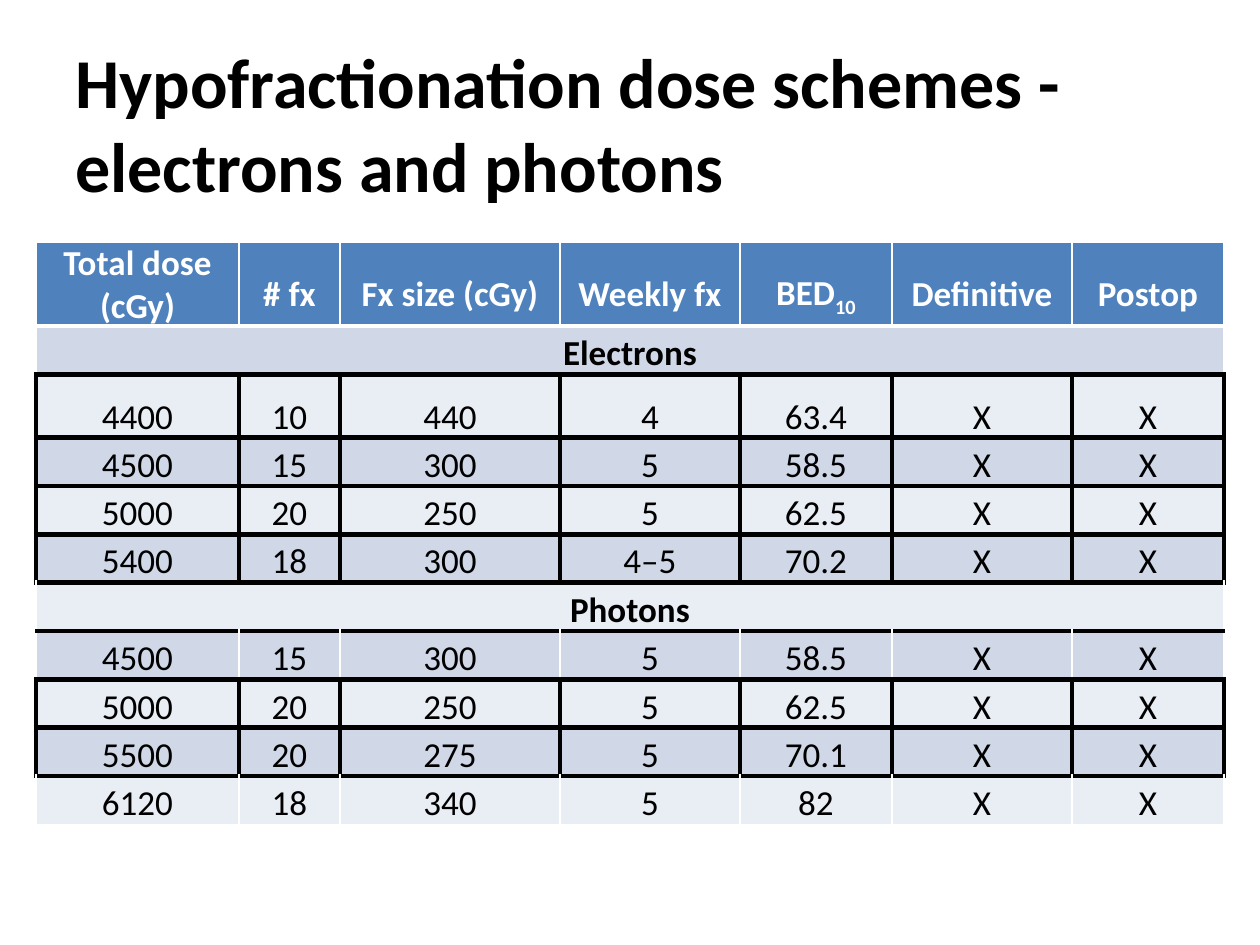
from dataclasses import dataclass

from lxml import etree
from pptx import Presentation
from pptx.dml.color import RGBColor
from pptx.enum.text import MSO_ANCHOR, PP_ALIGN
from pptx.oxml.ns import qn
from pptx.util import Pt

CENTER = PP_ALIGN.CENTER
MIDDLE = MSO_ANCHOR.MIDDLE
TOP = MSO_ANCHOR.TOP
EMU_PER_PX = 914400 / 126


@dataclass(frozen=True)
class Theme:
    font: str = "Calibri"
    title_size: int = 40
    table_size: int = 20
    black: str = "000000"
    white: str = "FFFFFF"
    header: str = "4F81BD"
    bands: tuple = ("E9EDF4", "D0D8E8")
    thin: int = 1
    thick: int = 3


THEME = Theme()
COLUMN_WIDTHS = [203, 101, 220, 180, 152, 180, 152]
HEADER_HEIGHT, ROW_HEIGHT, TALL_HEIGHT = 76, 40, 49
HEADERS = ["Total dose (cGy)", "# fx", "Fx size (cGy)", "Weekly fx",
           "BED10", "Definitive", "Postop"]
SCHEMES = {
    "Electrons": [
        ("4400", "10", "440", "4", "63.4"),
        ("4500", "15", "300", "5", "58.5"),
        ("5000", "20", "250", "5", "62.5"),
        ("5400", "18", "300", "4–5", "70.2"),
    ],
    "Photons": [
        ("4500", "15", "300", "5", "58.5"),
        ("5000", "20", "250", "5", "62.5"),
        ("5500", "20", "275", "5", "70.1"),
        ("6120", "18", "340", "5", "82"),
    ],
}
THIN = (THEME.white, THEME.thin)
WHITE_RULE = (THEME.white, THEME.thick)
RULE = (THEME.black, THEME.thick)
GRID = dict(L=RULE, R=RULE, T=RULE, B=RULE)
HEADER_BORDERS = dict(L=THIN, R=THIN, T=THIN, B=WHITE_RULE)
OPEN_SIDES = dict(L=THIN, R=THIN, T=RULE, B=RULE)
FIRST_GROUP = dict(OPEN_SIDES, T=WHITE_RULE)
LAST_ROW = dict(OPEN_SIDES, B=THIN)


def px(n):
    return round(n * EMU_PER_PX)


def style_run(r, size, color, bold):
    r.font.name = THEME.font
    r.font.size = Pt(size)
    r.font.bold = bold
    r.font.color.rgb = RGBColor.from_string(color)


def add_title(slide, text):
    tf = slide.shapes.add_textbox(px(63), px(32), px(1110), px(137)).text_frame
    tf.word_wrap = True
    tf.vertical_anchor = TOP
    tf.text = text
    style_run(tf.paragraphs[0].runs[0], THEME.title_size, THEME.black, True)


def set_borders(cell, borders):
    tc_pr = cell._tc.get_or_add_tcPr()
    for side, (color, width) in borders.items():
        ln = etree.SubElement(tc_pr, qn(f"a:ln{side}"), w=str(Pt(width)))
        fill = etree.SubElement(ln, qn("a:solidFill"))
        etree.SubElement(fill, qn("a:srgbClr"), val=color)


def paint_row(row, fill, borders):
    for cell in row.cells:
        set_borders(cell, borders)
        cell.fill.solid()
        cell.fill.fore_color.rgb = RGBColor.from_string(fill)


def write_cell(cell, text, color=THEME.black, bold=False, spacing=1.15):
    cell.margin_left = cell.margin_right = px(6)
    cell.margin_top = cell.margin_bottom = 0
    cell.vertical_anchor = MIDDLE
    p = cell.text_frame.paragraphs[0]
    p.text = text
    p.alignment = CENTER
    p.line_spacing = spacing
    for r in p.runs:
        style_run(r, THEME.table_size, color, bold)


def add_subscript(cell, text):
    r = cell.text_frame.paragraphs[0].add_run()
    r.text = text
    style_run(r, THEME.table_size, THEME.white, True)
    r.font._element.set("baseline", "-25000")


def write_header(row):
    row.height = px(HEADER_HEIGHT)
    paint_row(row, THEME.header, HEADER_BORDERS)
    for i, (cell, text) in enumerate(zip(row.cells, HEADERS)):
        base = text.removesuffix("10")
        write_cell(cell, base, THEME.white, True, 1.5 if i else 1.0)
        if base != text:
            add_subscript(cell, "10")


def write_group(row, name, fill, borders):
    paint_row(row, fill, borders)
    cells = list(row.cells)
    cells[0].merge(cells[-1])
    write_cell(cells[0], name, bold=True)


def write_scheme(row, values, fill, borders, spacing):
    paint_row(row, fill, borders)
    for cell, text in zip(row.cells, values + ("X", "X")):
        write_cell(cell, text, spacing=spacing)


def add_dose_table(slide):
    count = 1 + sum(1 + len(schemes) for schemes in SCHEMES.values())
    table = slide.shapes.add_table(
        count, len(HEADERS), px(36), px(242), px(sum(COLUMN_WIDTHS)),
        px(HEADER_HEIGHT + TALL_HEIGHT + ROW_HEIGHT * (count - 2))).table
    for column, width in zip(table.columns, COLUMN_WIDTHS):
        column.width = px(width)
    write_header(table.rows[0])
    special_borders = {1: FIRST_GROUP, 6: OPEN_SIDES, 7: OPEN_SIDES,
                       count - 1: LAST_ROW}
    index = 1
    for name, schemes in SCHEMES.items():
        for values in [None] + schemes:
            row = table.rows[index]
            row.height = px(TALL_HEIGHT if index == 2 else ROW_HEIGHT)
            fill = THEME.bands[index % 2]
            borders = special_borders.get(index, GRID)
            if values is None:
                write_group(row, name, fill, borders)
            else:
                write_scheme(row, values, fill, borders,
                             1.5 if index == 2 else 1.15)
            index += 1


def main():
    prs = Presentation()
    prs.slide_width, prs.slide_height = px(1260), px(945)
    slide = prs.slides.add_slide(prs.slide_layouts[6])
    add_title(slide, "Hypofractionation dose schemes - electrons and photons")
    add_dose_table(slide)
    prs.save("out.pptx")


if __name__ == "__main__":
    main()
